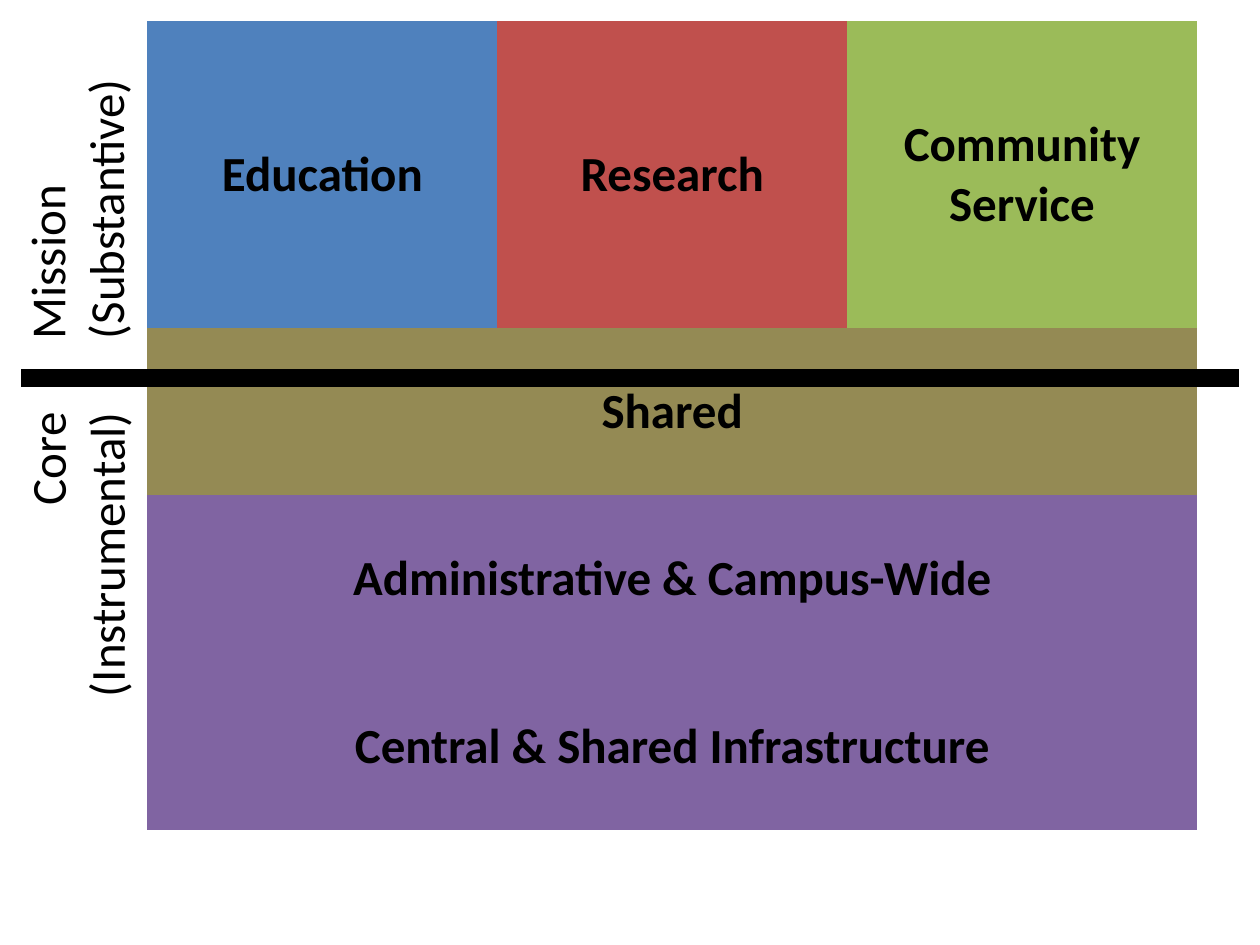
import pptx
import pptx.dml.color
import pptx.enum.shapes
import pptx.enum.text
import pptx.oxml.ns
import pptx.util
import lxml.etree

Inches = pptx.util.Inches
RGBColor = pptx.dml.color.RGBColor
ALIGN = pptx.enum.text.PP_ALIGN

BLACK = RGBColor(0x00, 0x00, 0x00)
BLUE = RGBColor(0x4F, 0x81, 0xBD)
RED = RGBColor(0xC0, 0x50, 0x4D)
GREEN = RGBColor(0x9B, 0xBB, 0x59)
TAN = RGBColor(0x94, 0x8A, 0x54)
PURPLE = RGBColor(0x80, 0x64, 0xA2)

PLAIN_STYLE = "{2D5ABB26-0587-4C30-8999-92F81FD0307C}"  # no fill, no grid

MISSIONS = [("Education", BLUE), ("Research", RED), ("Community Service", GREEN)]
LAYERS = [
    ("Shared", TAN),
    ("Administrative & Campus-Wide", PURPLE),
    ("Central & Shared Infrastructure", PURPLE),
]


def style_text(frame, align, bold):
    for para in frame.paragraphs:
        para.alignment = align
        for run in para.runs:
            run.font.name = "Calibri"
            run.font.size = pptx.util.Pt(28)
            run.font.bold = bold
            run.font.color.rgb = BLACK


def fill_cell(cell, text, color):
    cell.fill.solid()
    cell.fill.fore_color.rgb = color
    cell.vertical_anchor = pptx.enum.text.MSO_ANCHOR.MIDDLE
    cell.text_frame.text = text
    style_text(cell.text_frame, ALIGN.CENTER, True)


def add_grid(slide):
    """Add the mission columns with the shared layers merged below them."""
    count = len(MISSIONS)
    frame = slide.shapes.add_table(
        1 + len(LAYERS), count,
        Inches(1.17), Inches(0.17), Inches(8.33), Inches(6.42))
    table = frame.table
    table.first_row = False
    table.horz_banding = False
    table._tbl.tblPr.find(pptx.oxml.ns.qn("a:tableStyleId")).text = PLAIN_STYLE

    for i, row in enumerate(table.rows):
        row.height = Inches(1.33 if i else 2.43)
    for col, (text, color) in enumerate(MISSIONS):
        fill_cell(table.cell(0, col), text, color)
    for row, (text, color) in enumerate(LAYERS, 1):
        cell = table.cell(row, 0)
        cell.merge(table.cell(row, count - 1))
        fill_cell(cell, text, color)


def add_rule(slide):
    rule = slide.shapes.add_connector(
        pptx.enum.shapes.MSO_CONNECTOR.STRAIGHT,
        Inches(0.17), Inches(3), Inches(9.83), Inches(3))
    rule.line.color.rgb = BLACK
    rule.line.width = pptx.util.Pt(10)
    lxml.etree.SubElement(
        rule._element.spPr, pptx.oxml.ns.qn("a:effectLst"))


def add_side(slide, text, left, top, width, align):
    """Add a label that reads upwards along the left edge."""
    box = slide.shapes.add_textbox(
        Inches(left), Inches(top), Inches(width), Inches(1.04))
    box.rotation = 270
    frame = box.text_frame
    frame.word_wrap = False
    frame.auto_size = pptx.enum.text.MSO_AUTO_SIZE.SHAPE_TO_FIT_TEXT
    frame.text = text
    style_text(frame, align, False)


def main():
    deck = pptx.Presentation()
    deck.slide_width = Inches(10)
    deck.slide_height = Inches(7.5)
    slide = deck.slides.add_slide(deck.slide_layouts[6])
    add_grid(slide)
    add_rule(slide)
    add_side(slide, "Core\n(Instrumental)", -0.64, 3.9, 2.49, ALIGN.RIGHT)
    add_side(slide, "Mission\n(Substantive)", -0.59, 1.08, 2.38, ALIGN.LEFT)
    deck.save("out.pptx")


if __name__ == "__main__":
    main()
